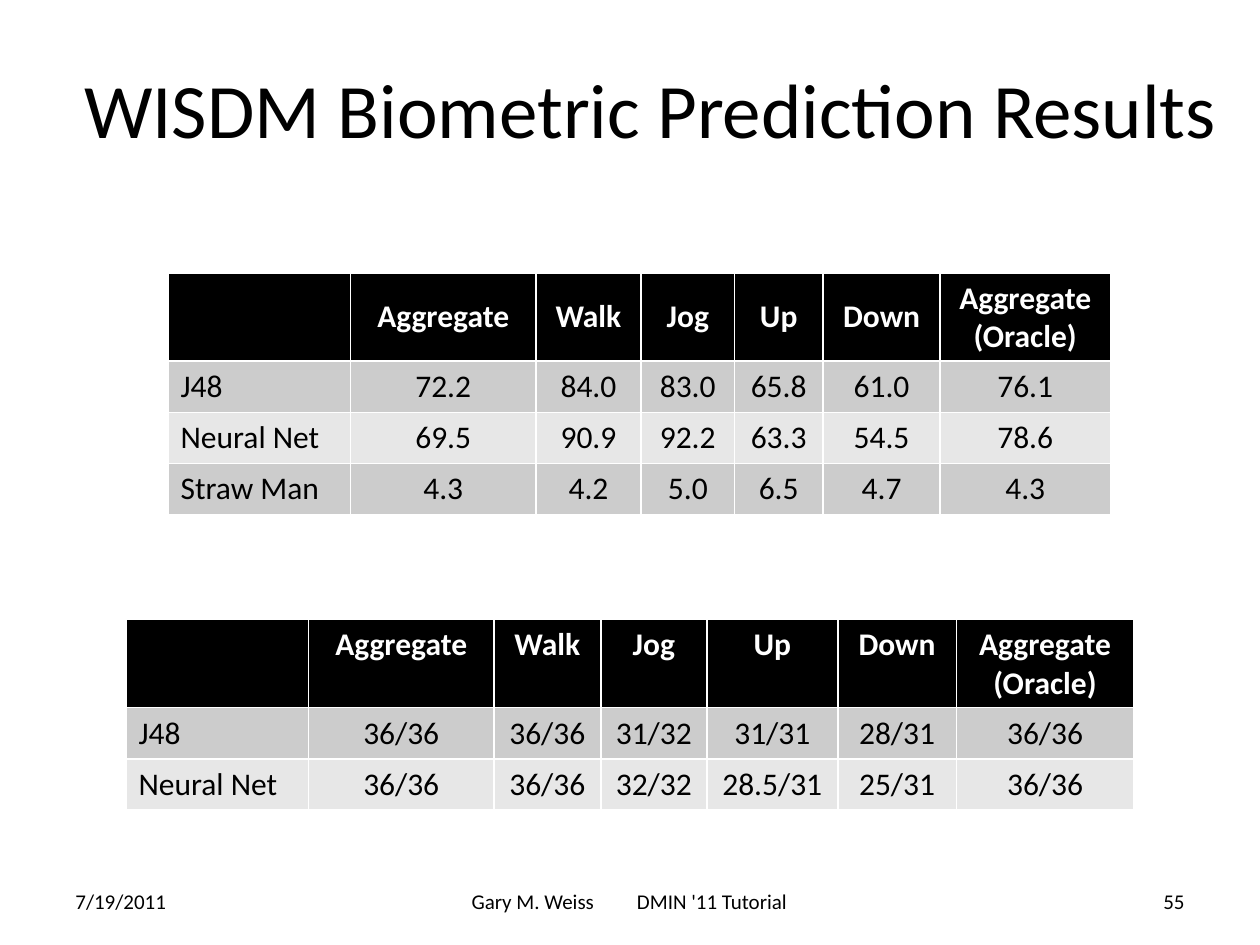
from pptx import Presentation
from pptx.util import Pt
from pptx.dml.color import RGBColor
from pptx.enum.text import PP_ALIGN as Al, MSO_ANCHOR as Anchor
from lxml.etree import SubElement
from pptx.oxml.ns import qn

BLACK, WHITE = "000000", "FFFFFF"
BANDS = ["CCCCCC", "E7E7E7"]


def style(para, text, size, align, color=BLACK, bold=False):
    para.text = text
    para.alignment = align
    font = para.font
    font.name, font.size, font.bold = "Calibri", Pt(size), bold
    font.color.rgb = RGBColor.from_string(color)


def label(box, text, size, align):
    frame = slide.shapes.add_textbox(*map(Pt, box)).text_frame
    frame.word_wrap = True
    frame.vertical_anchor = Anchor.MIDDLE
    style(frame.paragraphs[0], text, size, align)
    return frame


deck = Presentation()
deck.slide_width, deck.slide_height = Pt(720), Pt(540)
slide = deck.slides.add_slide(deck.slide_layouts[6])

# Title
label((36, 12, 672, 99), "WISDM Biometric Prediction Results", 44, Al.CENTER)

# Tables: left, top, column widths, header anchor, body rows
head = ["", "Aggregate", "Walk", "Jog", "Up", "Down", "Aggregate\n(Oracle)"]
tables = [
    (96, 156, [104.4, 105.8, 60.2, 53.3, 50.6, 67, 97.2], Anchor.MIDDLE, [
        ["J48", "72.2", "84.0", "83.0", "65.8", "61.0", "76.1"],
        ["Neural Net", "69.5", "90.9", "92.2", "63.3", "54.5", "78.6"],
        ["Straw Man", "4.3", "4.2", "5.0", "6.5", "4.7", "4.3"]]),
    (72, 354, [104.4, 105.8, 61.2, 60.5, 74.9, 67.7, 101.5], Anchor.TOP, [
        ["J48", "36/36", "36/36", "31/32", "31/31", "28/31", "36/36"],
        ["Neural Net", "36/36", "36/36", "32/32", "28.5/31", "25/31", "36/36"]]),
]
for left, top, widths, anchor, body in tables:
    rows = [head] + body
    high = [50.4] + [29.2] * len(body)
    grid = slide.shapes.add_table(len(rows), len(head), Pt(left), Pt(top),
                                  Pt(sum(widths)), Pt(sum(high))).table
    for col, width in zip(grid.columns, widths):
        col.width = Pt(width)
    for r, row in enumerate(rows):
        grid.rows[r].height = Pt(high[r])
        for c, text in enumerate(row):
            cell = grid.cell(r, c)
            cell.fill.solid()
            fill = BANDS[(r - 1) % 2] if r else BLACK
            cell.fill.fore_color.rgb = RGBColor.from_string(fill)
            cell.vertical_anchor = Anchor.TOP if r else anchor
            style(cell.text_frame.paragraphs[0], text, 18,
                  Al.CENTER if c else Al.LEFT, BLACK if r else WHITE, r == 0)

# Footer: date, author and event, page number
label((36, 500.4, 168, 28.8), "7/19/2011", 12, Al.LEFT)
label((516, 500.4, 168, 28.8), "55", 12, Al.RIGHT)
foot = label((246, 500.4, 228, 28.8),
             "Gary M. Weiss\tDMIN '11 Tutorial", 12, Al.LEFT)
foot.margin_left = Pt(23.5)

# Tab stop between author and event
props = foot.paragraphs[0].font._element.getparent()
tabs = SubElement(props, qn("a:tabLst"))
SubElement(tabs, qn("a:tab"), pos=str(Pt(94.5)), algn="l")
props.insert(0, tabs)

deck.save("out.pptx")
